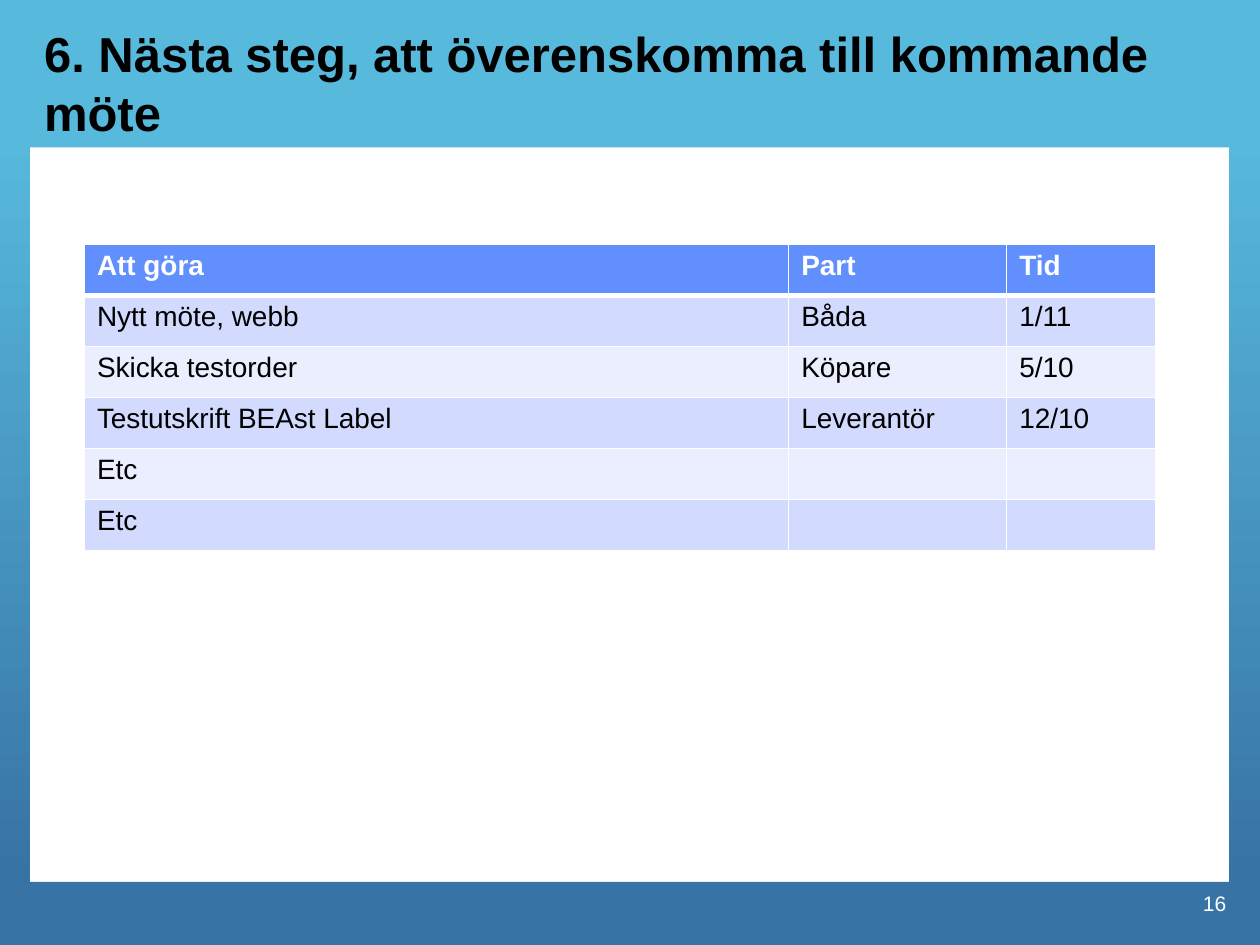
from dataclasses import dataclass

from lxml import etree
from pptx import Presentation
from pptx.dml.color import RGBColor
from pptx.enum.shapes import MSO_SHAPE
from pptx.enum.text import MSO_ANCHOR, PP_ALIGN
from pptx.oxml.ns import qn
from pptx.slide import Slide
from pptx.table import Table, _Cell
from pptx.text.text import TextFrame
from pptx.util import Inches, Pt

RECTANGLE = MSO_SHAPE.RECTANGLE
LEFT, RIGHT = PP_ALIGN.LEFT, PP_ALIGN.RIGHT
TOP, MIDDLE, BOTTOM = MSO_ANCHOR.TOP, MSO_ANCHOR.MIDDLE, MSO_ANCHOR.BOTTOM
TITLE_ONLY_LAYOUT = 5
SLIDE_WIDTH, SLIDE_HEIGHT = 10, 7.5


@dataclass(frozen=True)
class Theme:
    font: str = "Arial"
    sky: str = "57B9DC"
    sea: str = "3773A5"
    header: str = "618FFD"
    stripes: tuple[str, str] = ("D2DBFE", "EAEEFF")
    light: str = "FFFFFF"
    dark: str = "000000"
    title_size: int = 28
    table_size: int = 16
    number_size: int = 12
    thin_border: int = 1
    header_border: int = 3


@dataclass(frozen=True)
class Box:
    left: float
    top: float
    width: float
    height: float

    def lengths(self) -> tuple[int, int, int, int]:
        return (Inches(self.left), Inches(self.top),
                Inches(self.width), Inches(self.height))


@dataclass(frozen=True)
class Band:
    box: Box
    start: str
    end: str


THEME = Theme()
HEADER_HEIGHT, FOOTER_HEIGHT, SIDE_WIDTH = 1.17, 0.5, 0.25
FOOTER_TOP = SLIDE_HEIGHT - FOOTER_HEIGHT
SIDE_TOP = 1.08
SIDE_HEIGHT = FOOTER_TOP - SIDE_TOP

BANDS = (
    Band(Box(-0.01, SIDE_TOP, SIDE_WIDTH, SIDE_HEIGHT), THEME.sky, THEME.sea),
    Band(Box(0, FOOTER_TOP, SLIDE_WIDTH, FOOTER_HEIGHT), THEME.sea, THEME.sea),
    Band(Box(0, 0, SLIDE_WIDTH, HEADER_HEIGHT), THEME.sky, THEME.sky),
    Band(Box(SLIDE_WIDTH - SIDE_WIDTH, SIDE_TOP, SIDE_WIDTH, SIDE_HEIGHT),
         THEME.sky, THEME.sea),
)
TITLE_BOX = Box(SIDE_WIDTH, 0, SLIDE_WIDTH - 2 * SIDE_WIDTH, HEADER_HEIGHT)
NUMBER_BOX = Box(7.75, 6.92, 2.08, 0.5)
TABLE_BOX = Box(0.67, 1.94, 8.5, 2.43)
COLUMN_WIDTHS = (5.59, 1.73, 1.18)
ROWS = (
    ("Att göra", "Part", "Tid"),
    ("Nytt möte, webb", "Båda", "1/11"),
    ("Skicka testorder", "Köpare", "5/10"),
    ("Testutskrift BEAst Label", "Leverantör", "12/10"),
    ("Etc", "", ""),
    ("Etc", "", ""),
)


def write_text(frame: TextFrame, text: str, size: int, color: str,
               bold: bool = False, alignment: PP_ALIGN = LEFT) -> None:
    paragraph = frame.paragraphs[0]
    paragraph.alignment = alignment
    paragraph.font.size = Pt(size)
    if text:
        run = paragraph.add_run()
        run.text = text
        run.font.name = THEME.font
        run.font.size = Pt(size)
        run.font.bold = bold
        run.font.color.rgb = RGBColor.from_string(color)


def add_band(slide: Slide, band: Band) -> None:
    shape = slide.shapes.add_shape(RECTANGLE, *band.box.lengths())
    shape.shadow.inherit = False
    shape.line.fill.background()
    if band.start == band.end:
        shape.fill.solid()
        shape.fill.fore_color.rgb = RGBColor.from_string(band.start)
        return
    shape.fill.gradient()
    shape.fill.gradient_angle = 270
    for stop, color in zip(shape.fill.gradient_stops, (band.start, band.end)):
        stop.color.rgb = RGBColor.from_string(color)


def place_title(slide: Slide, text: str) -> None:
    title = slide.shapes.title
    title.left, title.top, title.width, title.height = TITLE_BOX.lengths()
    slide.shapes._spTree.append(title._element)
    frame = title.text_frame
    frame.vertical_anchor = BOTTOM
    frame.word_wrap = True
    write_text(frame, text, THEME.title_size, THEME.dark, bold=True)


def add_slide_number(slide: Slide, number: str) -> None:
    frame = slide.shapes.add_textbox(*NUMBER_BOX.lengths()).text_frame
    frame.word_wrap = True
    frame.vertical_anchor = MIDDLE
    write_text(frame, number, THEME.number_size, THEME.light, alignment=RIGHT)


def set_borders(cell: _Cell, top: int, bottom: int) -> None:
    properties = cell._tc.get_or_add_tcPr()
    widths = {"a:lnL": THEME.thin_border, "a:lnR": THEME.thin_border,
              "a:lnT": top, "a:lnB": bottom}
    for position, (tag, width) in enumerate(widths.items()):
        line = etree.Element(qn(tag), w=str(Pt(width)))
        fill = etree.SubElement(line, qn("a:solidFill"))
        etree.SubElement(fill, qn("a:srgbClr"), val=THEME.light)
        properties.insert(position, line)


def fill_row(table: Table, row: int, texts: tuple[str, ...]) -> None:
    is_header = row == 0
    background = THEME.header if is_header else THEME.stripes[(row - 1) % 2]
    color = THEME.light if is_header else THEME.dark
    top = THEME.header_border if row == 1 else THEME.thin_border
    bottom = THEME.header_border if is_header else THEME.thin_border
    for column, text in enumerate(texts):
        cell = table.cell(row, column)
        cell.fill.solid()
        cell.fill.fore_color.rgb = RGBColor.from_string(background)
        cell.vertical_anchor = TOP
        write_text(cell.text_frame, text, THEME.table_size, color, is_header)
        set_borders(cell, top, bottom)


def add_action_table(slide: Slide) -> None:
    table = slide.shapes.add_table(
        len(ROWS), len(COLUMN_WIDTHS), *TABLE_BOX.lengths()).table
    for column, width in zip(table.columns, COLUMN_WIDTHS):
        column.width = Inches(width)
    for row, texts in enumerate(ROWS):
        fill_row(table, row, texts)


def main() -> None:
    presentation = Presentation()
    presentation.slide_width = Inches(SLIDE_WIDTH)
    presentation.slide_height = Inches(SLIDE_HEIGHT)
    slide = presentation.slides.add_slide(
        presentation.slide_layouts[TITLE_ONLY_LAYOUT])
    for band in BANDS:
        add_band(slide, band)
    add_slide_number(slide, "16")
    place_title(slide, "6. Nästa steg, att överenskomma till kommande möte")
    add_action_table(slide)
    presentation.save("out.pptx")


if __name__ == "__main__":
    main()
